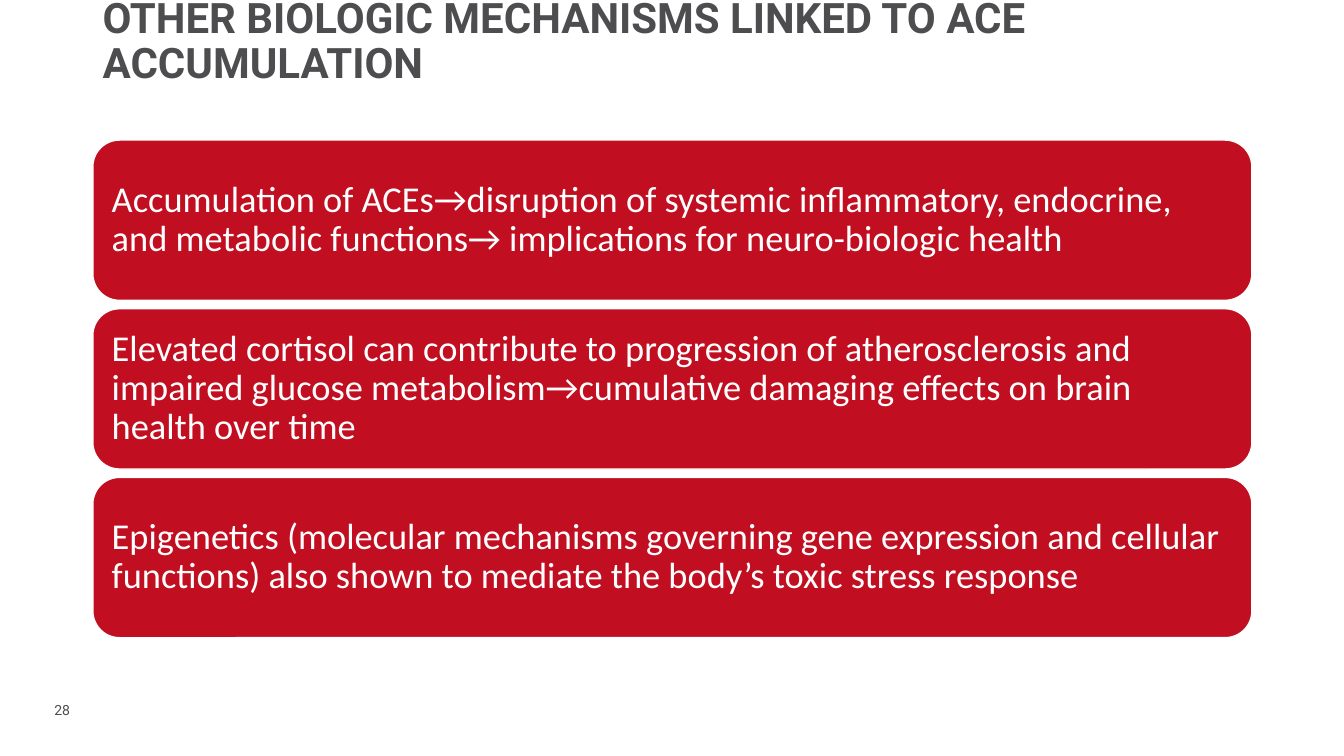
from pptx import Presentation
from pptx import util as u
from pptx.dml.color import RGBColor
from pptx.enum import shapes, text


def tint(code):
    return RGBColor.from_string(code)


class Deck:
    gray, red, white = "4D4D4F", "C10E20", "FFFFFF"
    head, body = "Roboto", "Calibri"

    def __init__(self):
        self.prs = Presentation()
        self.prs.slide_width = u.Cm(33.87)
        self.prs.slide_height = u.Cm(19.05)
        self.slide = self.prs.slides.add_slide(self.prs.slide_layouts[6])

    def put(self, frame, words, font, size, color, bold=False, line=1.0):
        para = frame.paragraphs[0]
        para.text = words
        para.alignment = text.PP_ALIGN.LEFT
        para.line_spacing = line
        para.font.name = font
        para.font.size = u.Pt(size)
        para.font.bold = bold
        para.font.color.rgb = tint(color)

    def label(self, words, box, size, wrap=True, anchor=text.MSO_ANCHOR.TOP, **style):
        frame = self.slide.shapes.add_textbox(*map(u.Cm, box)).text_frame
        frame.word_wrap = wrap
        frame.vertical_anchor = anchor
        self.put(frame, words, self.head, size, self.gray, **style)

    def card(self, words, box):
        shape = self.slide.shapes.add_shape(
            shapes.MSO_SHAPE.ROUNDED_RECTANGLE, *map(u.Cm, box))
        shape.shadow.inherit = False
        shape.fill.solid()
        shape.fill.fore_color.rgb = tint(self.red)
        shape.line.color.rgb = tint(self.white)
        shape.line.width = u.Pt(1)
        frame = shape.text_frame
        frame.word_wrap = True
        frame.vertical_anchor = text.MSO_ANCHOR.MIDDLE
        frame.margin_left = frame.margin_right = u.Cm(0.28)
        frame.margin_top = frame.margin_bottom = u.Cm(0.28)
        self.put(frame, words, self.body, 26, self.white, line=0.9)


def main():
    deck = Deck()
    deck.label("28", (1.12, 17.55, 0.99, 0.69), 10, wrap=False)
    deck.label("OTHER BIOLOGIC MECHANISMS LINKED TO ACE ACCUMULATION",
               (2.34, 1.02, 29.21, 1.32), 30,
               anchor=text.MSO_ANCHOR.BOTTOM, bold=True, line=0.9)
    points = (
        "Accumulation of ACEs→disruption of systemic inflammatory, endocrine, "
        "and metabolic functions→ implications for neuro-biologic health",
        "Elevated cortisol can contribute to progression of atherosclerosis and "
        "impaired glucose metabolism→cumulative damaging effects on brain "
        "health over time",
        "Epigenetics (molecular mechanisms governing gene expression and cellular "
        "functions) also shown to mediate the body’s toxic stress response",
    )
    top, high, gap = 3.53, 4.04, 0.21
    for row, point in enumerate(points):
        deck.card(point, (2.34, top + row * (high + gap), 29.21, high))
    deck.prs.save("out.pptx")


if __name__ == "__main__":
    main()
